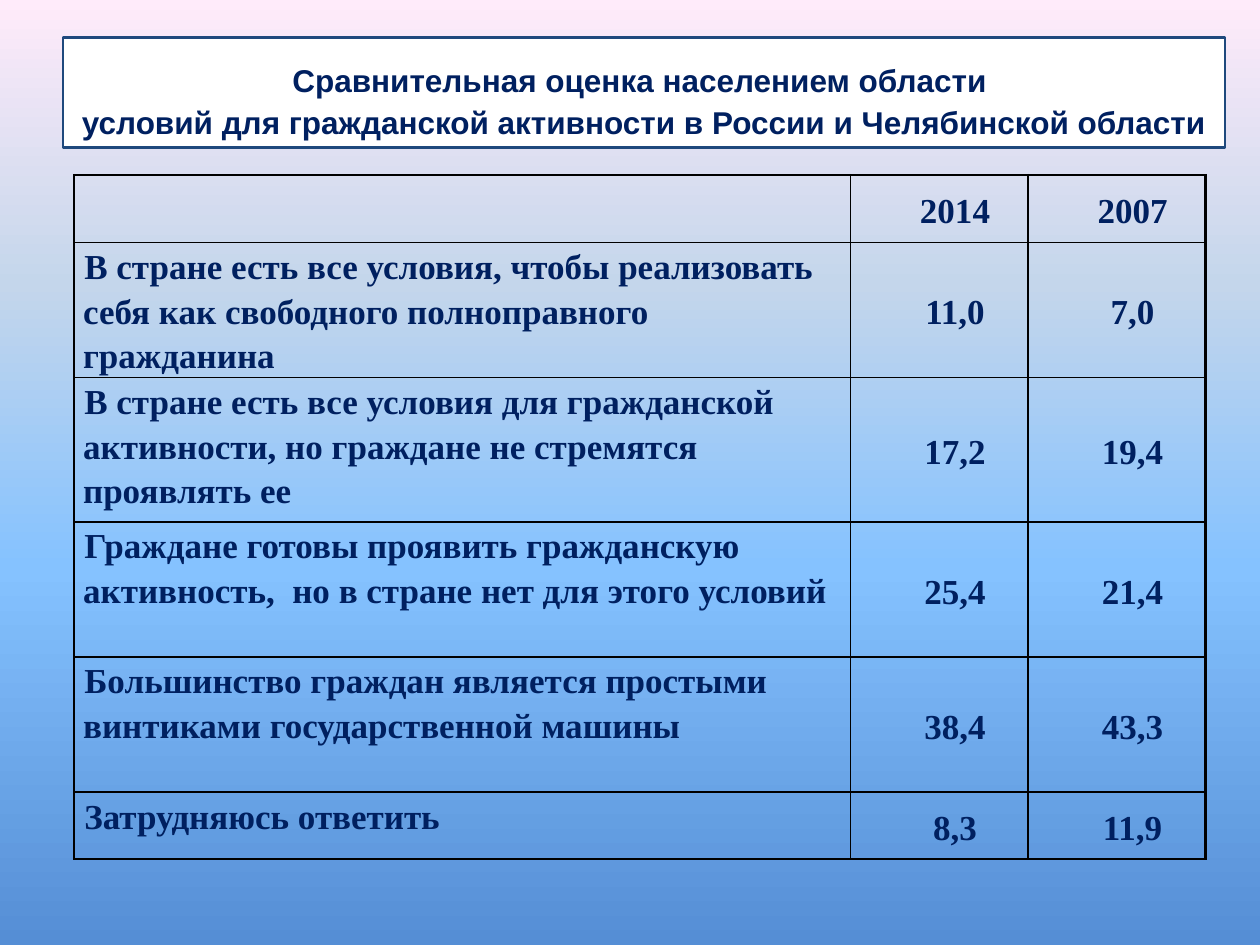
from copy import deepcopy
from dataclasses import dataclass

from lxml.etree import SubElement
from pptx import Presentation
from pptx.dml.color import RGBColor
from pptx.enum.text import MSO_ANCHOR, MSO_AUTO_SIZE, PP_ALIGN
from pptx.oxml.ns import qn
from pptx.util import Pt


@dataclass(frozen=True)
class Theme:
    """Colours, fonts and sizes shared by the slide."""

    text: str = "002060"
    title_fill: str = "FFFFFF"
    title_line: str = "1F497D"
    grid: str = "000000"
    title_font: str = "Arial"
    table_font: str = "Times New Roman"
    title_size: float = 18
    table_size: float = 20
    outer_line: float = 1.5
    inner_line: float = 1
    background: tuple = ((0, "558ED5"), (0.4, "85C2FF"), (0.7, "C4D6EB"), (1, "FFEBFA"))


THEME = Theme()
TITLE = (
    "Сравнительная оценка населением области \v"
    "условий для гражданской активности в России и Челябинской области"
)
ROWS = [
    ("", "2014", "2007"),
    ("В стране есть все условия, чтобы реализовать себя как свободного "
     "полноправного гражданина", "11,0", "7,0"),
    ("В стране есть все условия для гражданской активности, но граждане "
     "не стремятся проявлять ее", "17,2", "19,4"),
    ("Граждане готовы проявить гражданскую активность,  но в стране нет "
     "для этого условий", "25,4", "21,4"),
    ("Большинство граждан является простыми винтиками государственной машины",
     "38,4", "43,3"),
    ("Затрудняюсь ответить", "8,3", "11,9"),
]
COLUMN_WIDTHS = (443.5, 101.5, 101.5)
ROW_HEIGHTS = (38.5, 77.2, 82.5, 77.2, 77.2, 38.5)


def apply_format(target, values):
    """Set each attribute named in values on the target."""
    for name, value in values.items():
        setattr(target, name, value)


def format_font(font, name, size):
    """Give a font the slide's bold navy look."""
    apply_format(font, {"name": name, "size": Pt(size), "bold": True})
    font.color.rgb = RGBColor.from_string(THEME.text)


def paint_background(slide):
    """Fill the slide with a gradient that rises from the bottom."""
    fill = slide.background.fill
    fill.gradient()
    fill.gradient_angle = 90
    stop_list = slide.element.find(".//" + qn("a:gsLst"))
    template = stop_list[0]
    while len(stop_list) < len(THEME.background):
        stop_list.append(deepcopy(template))
    for stop, (position, color) in zip(fill.gradient_stops, THEME.background):
        stop.position = position
        stop.color.rgb = RGBColor.from_string(color)


def add_title(slide):
    """Place the framed heading."""
    title = slide.shapes.title
    apply_format(title, {"left": Pt(36), "top": Pt(21.6), "width": Pt(664), "height": Pt(62.6)})
    title.fill.solid()
    title.fill.fore_color.rgb = RGBColor.from_string(THEME.title_fill)
    title.line.color.rgb = RGBColor.from_string(THEME.title_line)
    title.line.width = Pt(THEME.outer_line)
    frame = title.text_frame
    frame.text = TITLE
    apply_format(frame, {
        "word_wrap": True,
        "auto_size": MSO_AUTO_SIZE.NONE,
        "vertical_anchor": MSO_ANCHOR.BOTTOM,
    })
    paragraph = frame.paragraphs[0]
    apply_format(paragraph, {"alignment": PP_ALIGN.CENTER, "line_spacing": Pt(24)})
    for run in paragraph.runs:
        format_font(run.font, THEME.title_font, THEME.title_size)


def draw_borders(cell, outer_sides):
    """Draw all four cell borders, heavier on the outer sides."""
    properties = cell._tc.get_or_add_tcPr()
    for side in "LRTB":
        width = THEME.outer_line if side in outer_sides else THEME.inner_line
        line = SubElement(properties, qn("a:ln" + side), w=str(int(Pt(width))))
        SubElement(SubElement(line, qn("a:solidFill")), qn("a:srgbClr"), val=THEME.grid)


def fill_cell(cell, text, is_number):
    """Write and format the text of one cell."""
    apply_format(cell, {
        "margin_left": Pt(5),
        "margin_right": Pt(5),
        "margin_top": 0,
        "margin_bottom": 0,
        "vertical_anchor": MSO_ANCHOR.MIDDLE if is_number else MSO_ANCHOR.TOP,
    })
    cell.fill.background()
    cell.text = text
    paragraph = cell.text_frame.paragraphs[0]
    apply_format(paragraph, {
        "alignment": PP_ALIGN.CENTER if is_number else PP_ALIGN.LEFT,
        "line_spacing": 1.15,
    })
    paragraph._p.get_or_add_pPr().set("indent", str(int(Pt(18 if is_number else 0.7))))
    for run in paragraph.runs:
        format_font(run.font, THEME.table_font, THEME.table_size)


def add_comparison_table(slide):
    """Build the table that compares the two survey years."""
    row_count, column_count = len(ROWS), len(COLUMN_WIDTHS)
    frame = slide.shapes.add_table(
        row_count, column_count, Pt(42.5), Pt(100),
        Pt(sum(COLUMN_WIDTHS)), Pt(sum(ROW_HEIGHTS)),
    )
    table = frame.table
    apply_format(table, {"first_row": False, "horz_banding": False})
    for column, width in zip(table.columns, COLUMN_WIDTHS):
        column.width = Pt(width)
    for row, height in zip(table.rows, ROW_HEIGHTS):
        row.height = Pt(height)
    for row_index, values in enumerate(ROWS):
        for column_index, text in enumerate(values):
            edges = {
                "L": column_index == 0,
                "R": column_index == column_count - 1,
                "T": row_index == 0,
                "B": row_index == row_count - 1,
            }
            cell = table.cell(row_index, column_index)
            draw_borders(cell, [side for side, is_outer in edges.items() if is_outer])
            fill_cell(cell, text, column_index > 0)


def main():
    """Build and save the slide."""
    presentation = Presentation()
    apply_format(presentation, {"slide_width": Pt(720), "slide_height": Pt(540)})
    slide = presentation.slides.add_slide(presentation.slide_layouts[5])
    paint_background(slide)
    add_title(slide)
    add_comparison_table(slide)
    presentation.save("out.pptx")


if __name__ == "__main__":
    main()
